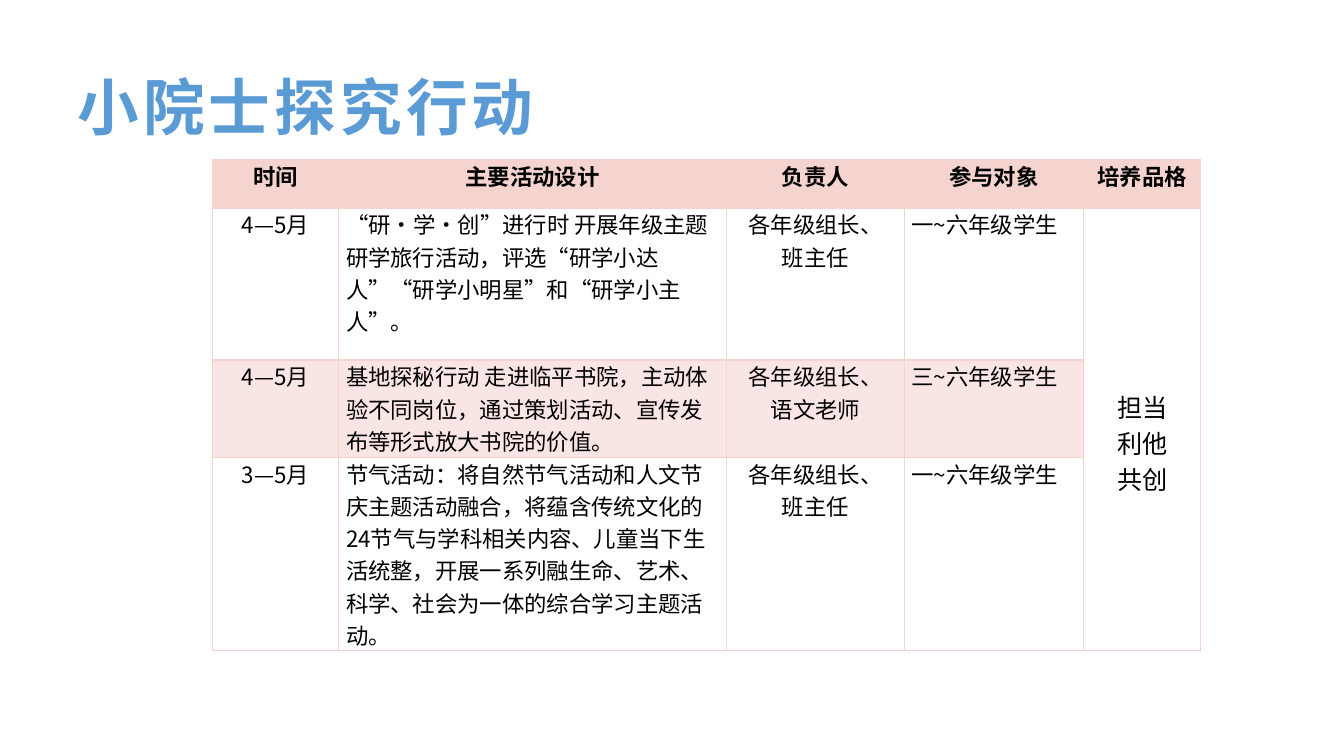
from lxml import etree
from pptx import Presentation
from pptx.dml.color import RGBColor
from pptx.enum import text
from pptx.oxml import ns
from pptx.util import Pt

PINK, PALE_PINK, WHITE, BLACK, BLUE = "F5D4D0", "F9E6E4", "FFFFFF", "000000", "5B9BD5"
TABLE_FONT, TITLE_FONT = "Noto Sans CJK SC", "Noto Sans CJK JP"
LEFT, CENTER = text.PP_ALIGN.LEFT, text.PP_ALIGN.CENTER

COLUMN_WIDTHS = [90, 277.4, 126.6, 128.4, 83.6]
ROW_HEIGHTS = [34.8, 108.6, 69.4, 138]
ROW_FILLS = [PINK, WHITE, PALE_PINK, WHITE]
COLUMN_ALIGNS = [CENTER, LEFT, CENTER, LEFT, CENTER]
ROWS = [
    ["时间", "主要活动设计", "负责人", "参与对象", "培养品格"],
    ["4—5月",
     "“研·学·创”进行时 开展年级主题研学旅行活动，评选“研学小达人”“研学小明星”和“研学小主人”。",
     "各年级组长、\n班主任", "一~六年级学生", "担当\n利他\n共创"],
    ["4—5月",
     "基地探秘行动 走进临平书院，主动体验不同岗位，通过策划活动、宣传发布等形式放大书院的价值。",
     "各年级组长、\n语文老师", "三~六年级学生", ""],
    ["3—5月",
     "节气活动：将自然节气活动和人文节庆主题活动融合，将蕴含传统文化的24节气与学科相关内容、"
     "儿童当下生活统整，开展一系列融生命、艺术、科学、社会为一体的综合学习主题活动。",
     "各年级组长、\n班主任", "一~六年级学生", ""],
]


def color(value):
    return RGBColor.from_string(value)


def write(frame, words, name, size, tint, bold=False, align=LEFT, spacing=0):
    """Fill a text frame, one paragraph a line, for Latin and East Asian glyphs alike."""
    frame.text = words
    for para in frame.paragraphs:
        para.alignment = align
        for font in [para.font] + [span.font for span in para.runs]:
            font.size, font.bold, font.name = Pt(size), bold, name
            font.color.rgb = color(tint)
            props = font._element
            etree.SubElement(props, ns.qn("a:ea"), typeface=name)
            if spacing:
                props.set("spc", str(spacing * 100))


def add_borders(cell, tint):
    props = cell._tc.get_or_add_tcPr()
    for index, side in enumerate(["lnL", "lnR", "lnT", "lnB"]):
        line = etree.Element(ns.qn("a:" + side), w=str(Pt(1)))
        fill = etree.SubElement(line, ns.qn("a:solidFill"))
        etree.SubElement(fill, ns.qn("a:srgbClr"), val=tint)
        props.insert(index, line)


def set_title(page, words):
    title = page.shapes.title
    title.left, title.top, title.width, title.height = Pt(48), Pt(48), Pt(864), Pt(55.6)
    title.text_frame.vertical_anchor = text.MSO_ANCHOR.MIDDLE
    write(title.text_frame, words, TITLE_FONT, 44, BLUE, bold=True, spacing=3)


def add_plan_table(page):
    table = page.shapes.add_table(
        len(ROWS), len(COLUMN_WIDTHS), Pt(151.8), Pt(113.8),
        Pt(sum(COLUMN_WIDTHS)), Pt(sum(ROW_HEIGHTS))).table
    for column, width in zip(table.columns, COLUMN_WIDTHS):
        column.width = Pt(width)
    for row, height in zip(table.rows, ROW_HEIGHTS):
        row.height = Pt(height)

    for r, words in enumerate(ROWS):
        for c, content in enumerate(words):
            cell = table.cell(r, c)
            cell.margin_left = cell.margin_right = Pt(5.4)
            cell.margin_top = cell.margin_bottom = 0
            is_header = r == 0
            is_quality = c == 4 and not is_header
            cell.fill.solid()
            cell.fill.fore_color.rgb = color(WHITE if is_quality else ROW_FILLS[r])
            add_borders(cell, PINK)
            write(cell.text_frame, content, TABLE_FONT, 18 if is_quality else 16, BLACK,
                  bold=is_header, align=CENTER if is_header else COLUMN_ALIGNS[c])

    quality = table.cell(1, 4)
    quality.merge(table.cell(3, 4))
    quality.vertical_anchor = text.MSO_ANCHOR.MIDDLE
    quality.margin_top = Pt(18.6)


def main():
    deck = Presentation()
    deck.slide_width, deck.slide_height = Pt(960), Pt(540)
    page = deck.slides.add_slide(deck.slide_layouts[5])
    set_title(page, "小院士探究行动")
    add_plan_table(page)
    deck.save("out.pptx")


if __name__ == "__main__":
    main()
